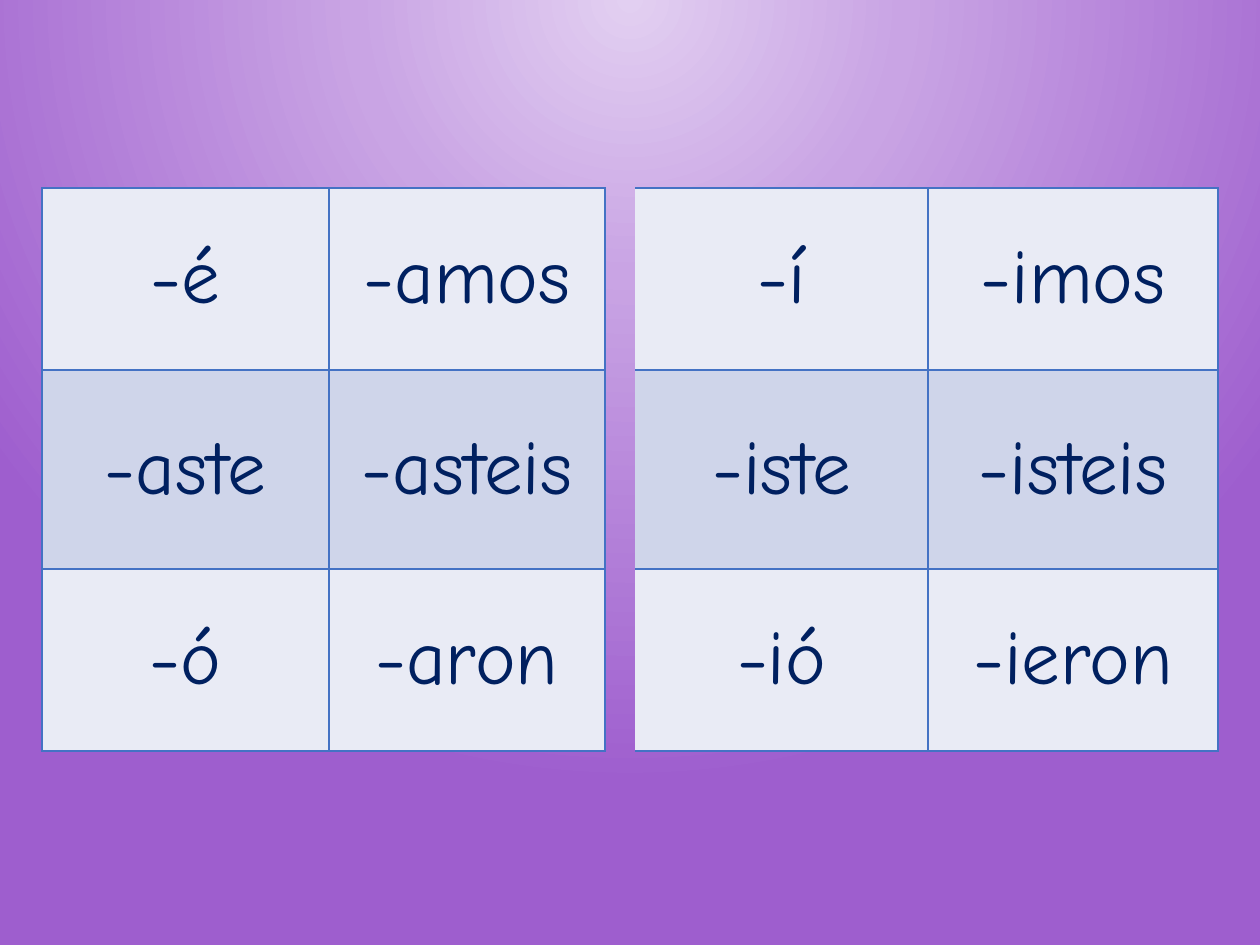
"""Build a slide with the two sets of Spanish preterite endings."""
from lxml.etree import SubElement
from pptx import Presentation
from pptx.dml.color import RGBColor
from pptx.enum.text import MSO_ANCHOR, PP_ALIGN
from pptx.oxml import parse_xml
from pptx.oxml.ns import nsdecls, qn
from pptx.util import Pt

ENDINGS = [
    ["-é", "-amos", None, "-í", "-imos"],
    ["-aste", "-asteis", None, "-iste", "-isteis"],
    ["-ó", "-aron", None, "-ió", "-ieron"],
]
COLS = [287, 276, 30, 293, 290]
ROWS = [182, 199, 182]
LEFT, TOP = 42, 188
SIDES = ["LRTB", "LTB", "", "RTB", "LRTB"]
COLORS = {"text": "002060", "border": "4472C4", "bands": ["E9EBF5", "CFD5EA"]}
GLOW = [(0, "E2CFF1"), (35, "C9A4E4"), (100, "9E5ECE")]
PLAIN_STYLE = "{2D5ABB26-0587-4C30-8999-92F81FD0307C}"


def px(n):
    return round(n * 914400 / 126)


def set_background(slide):
    stops = "".join(
        f'<a:gs pos="{pos * 1000}"><a:srgbClr val="{color}"/></a:gs>' for pos, color in GLOW
    )
    bg = parse_xml(
        f'<p:bg {nsdecls("p", "a")}><p:bgPr><a:gradFill rotWithShape="1">'
        f'<a:gsLst>{stops}</a:gsLst><a:path path="circle">'
        '<a:fillToRect l="50000" t="-80000" r="50000" b="180000"/></a:path>'
        '</a:gradFill><a:effectLst/></p:bgPr></p:bg>'
    )
    slide.element.find(qn("p:cSld")).insert(0, bg)


def set_borders(cell, sides, color, width=1):
    tc_pr = cell._tc.get_or_add_tcPr()
    for side in sides:
        ln = SubElement(tc_pr, qn(f"a:ln{side}"), w=str(Pt(width)))
        SubElement(SubElement(ln, qn("a:solidFill")), qn("a:srgbClr"), val=color)


def write(cell, text, size=44, font="Comic Neue", color=COLORS["text"]):
    cell.vertical_anchor = MSO_ANCHOR.MIDDLE
    p = cell.text_frame.paragraphs[0]
    p.alignment = PP_ALIGN.CENTER
    r = p.add_run()
    r.text = text
    r.font.size = Pt(size)
    r.font.name = font
    r.font.color.rgb = RGBColor.from_string(color)


def add_endings(slide):
    frame = slide.shapes.add_table(
        len(ROWS), len(COLS), px(LEFT), px(TOP), px(sum(COLS)), px(sum(ROWS))
    )
    table = frame.table
    table.first_row = table.horz_banding = False
    next(frame.element.iter(qn("a:tableStyleId"))).text = PLAIN_STYLE
    for col, width in zip(table.columns, COLS):
        col.width = px(width)
    for i, (row, height) in enumerate(zip(table.rows, ROWS)):
        row.height = px(height)
        for cell, text, sides in zip(row.cells, ENDINGS[i], SIDES):
            set_borders(cell, sides, COLORS["border"])
            if text is None:
                cell.fill.background()
                continue
            cell.fill.solid()
            cell.fill.fore_color.rgb = RGBColor.from_string(COLORS["bands"][i % 2])
            write(cell, text)


def main():
    prs = Presentation()
    prs.slide_width, prs.slide_height = px(1260), px(945)
    s = prs.slides.add_slide(prs.slide_layouts[6])
    set_background(s)
    add_endings(s)
    prs.save("out.pptx")


if __name__ == "__main__":
    main()
